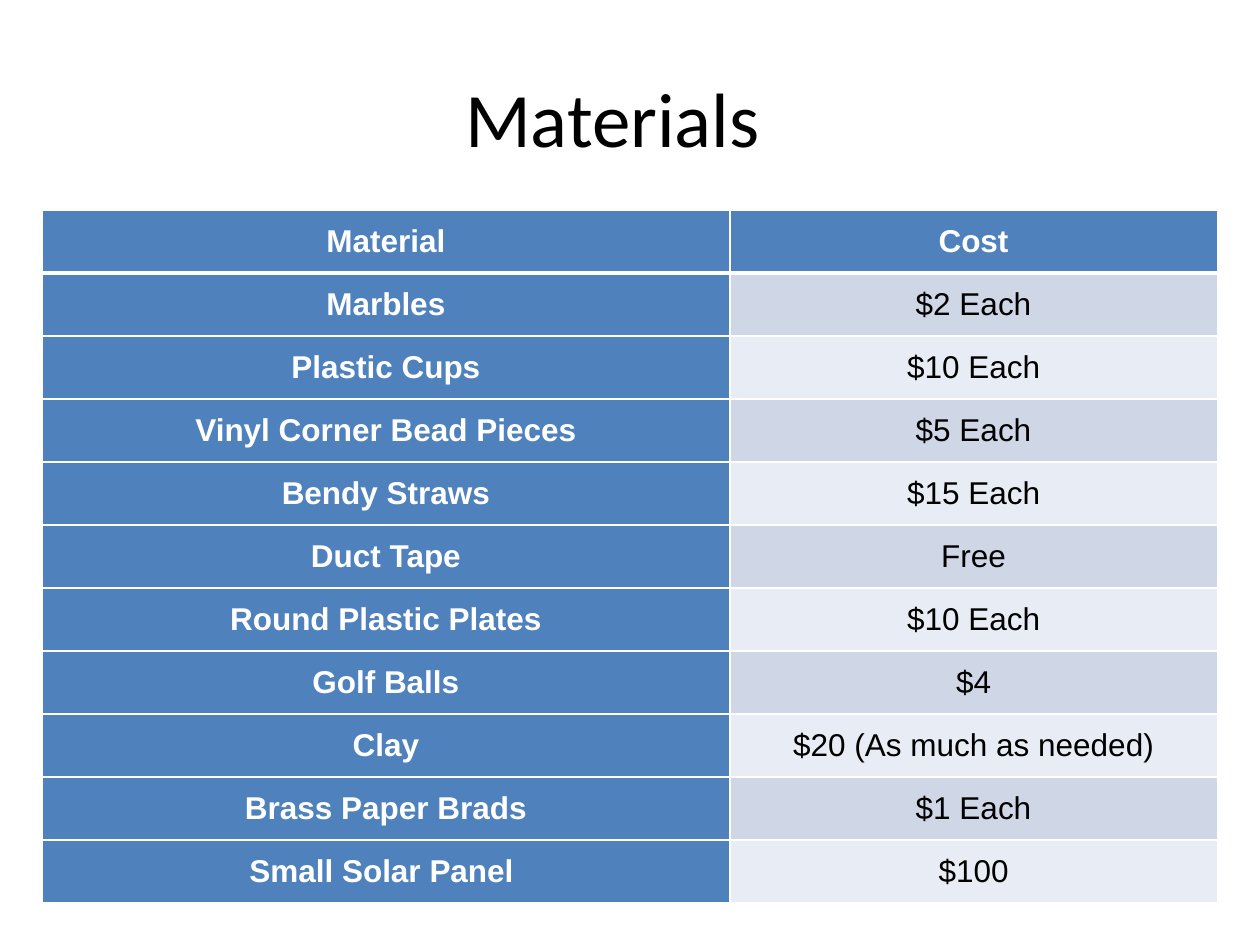
from lxml import etree
from pptx import Presentation
from pptx.dml import color as dml
from pptx.enum import text as t
from pptx.oxml import ns
from pptx.util import Pt

WHITE, BLACK, BLUE = "FFFFFF", "000000", "4F81BD"
BANDS = ("CFD7E7", "E8ECF4")

MATERIALS = [
    ("Material", "Cost"),
    ("Marbles", "$2 Each"),
    ("Plastic Cups", "$10 Each"),
    ("Vinyl Corner Bead Pieces", "$5 Each"),
    ("Bendy Straws", "$15 Each"),
    ("Duct Tape", "Free"),
    ("Round Plastic Plates", "$10 Each"),
    ("Golf Balls", "$4"),
    ("Clay", "$20 (As much as needed)"),
    ("Brass Paper Brads", "$1 Each"),
    ("Small Solar Panel ", "$100"),
]


def rgb(value):
    return dml.RGBColor.from_string(value)


class SlideWriter:
    title_font, title_size = "Calibri", 44
    table_font, table_size = "Arial", 18

    def __init__(self, slide):
        self.slide = slide

    def run(self, paragraph, words, font, size, color, bold=False):
        paragraph.alignment = t.PP_ALIGN.CENTER
        run = paragraph.add_run()
        run.text = words
        run.font.name, run.font.size, run.font.bold = font, Pt(size), bold
        run.font.color.rgb = rgb(color)

    def title(self, words, left, top, width, height, right_inset):
        frame = self.slide.shapes.add_textbox(
            Pt(left), Pt(top), Pt(width), Pt(height)).text_frame
        frame.word_wrap = True
        frame.vertical_anchor = t.MSO_ANCHOR.MIDDLE
        frame.margin_right = Pt(right_inset)
        self.run(frame.paragraphs[0], words, self.title_font, self.title_size, BLACK)

    def borders(self, cell, top, bottom):
        properties = cell._tc.get_or_add_tcPr()
        widths = {"a:lnL": 1, "a:lnR": 1, "a:lnT": top, "a:lnB": bottom}
        for position, (side, width) in enumerate(widths.items()):
            line = etree.Element(ns.qn(side), w=str(Pt(width)))
            fill = etree.SubElement(line, ns.qn("a:solidFill"))
            etree.SubElement(fill, ns.qn("a:srgbClr"), val=WHITE)
            properties.insert(position, line)

    def cell(self, cell, words, fill, color, bold):
        cell.fill.solid()
        cell.fill.fore_color.rgb = rgb(fill)
        cell.vertical_anchor = t.MSO_ANCHOR.MIDDLE
        cell.margin_left = cell.margin_right = Pt(5)
        cell.margin_top = cell.margin_bottom = Pt(0)
        self.run(cell.text_frame.paragraphs[0], words,
                 self.table_font, self.table_size, color, bold)

    def table(self, rows, left, top, column_widths, row_height):
        table = self.slide.shapes.add_table(
            len(rows), len(column_widths), Pt(left), Pt(top),
            Pt(sum(column_widths)), Pt(row_height * len(rows))).table
        table.first_col = True
        for column, width in zip(table.columns, column_widths):
            column.width = Pt(width)
        for r, row in enumerate(rows):
            table.rows[r].height = Pt(row_height)
            for c, words in enumerate(row):
                heading = r == 0 or c == 0
                fill = BLUE if heading else BANDS[(r - 1) % 2]
                cell = table.cell(r, c)
                self.cell(cell, words, fill, WHITE if heading else BLACK, heading)
                # The rule under the header row is heavier
                self.borders(cell, top=3 if r == 1 else 1, bottom=3 if r == 0 else 1)


def main():
    deck = Presentation()
    deck.slide_width, deck.slide_height = Pt(720), Pt(540)
    writer = SlideWriter(deck.slides.add_slide(deck.slide_layouts[6]))

    # Title, set slightly left of centre by its right inset
    writer.title("Materials", 36, 21.6, 648, 90, right_inset=27)

    # Materials and their costs
    writer.table(MATERIALS, 24, 120, (393, 278.6), 36)

    deck.save("out.pptx")


if __name__ == "__main__":
    main()
